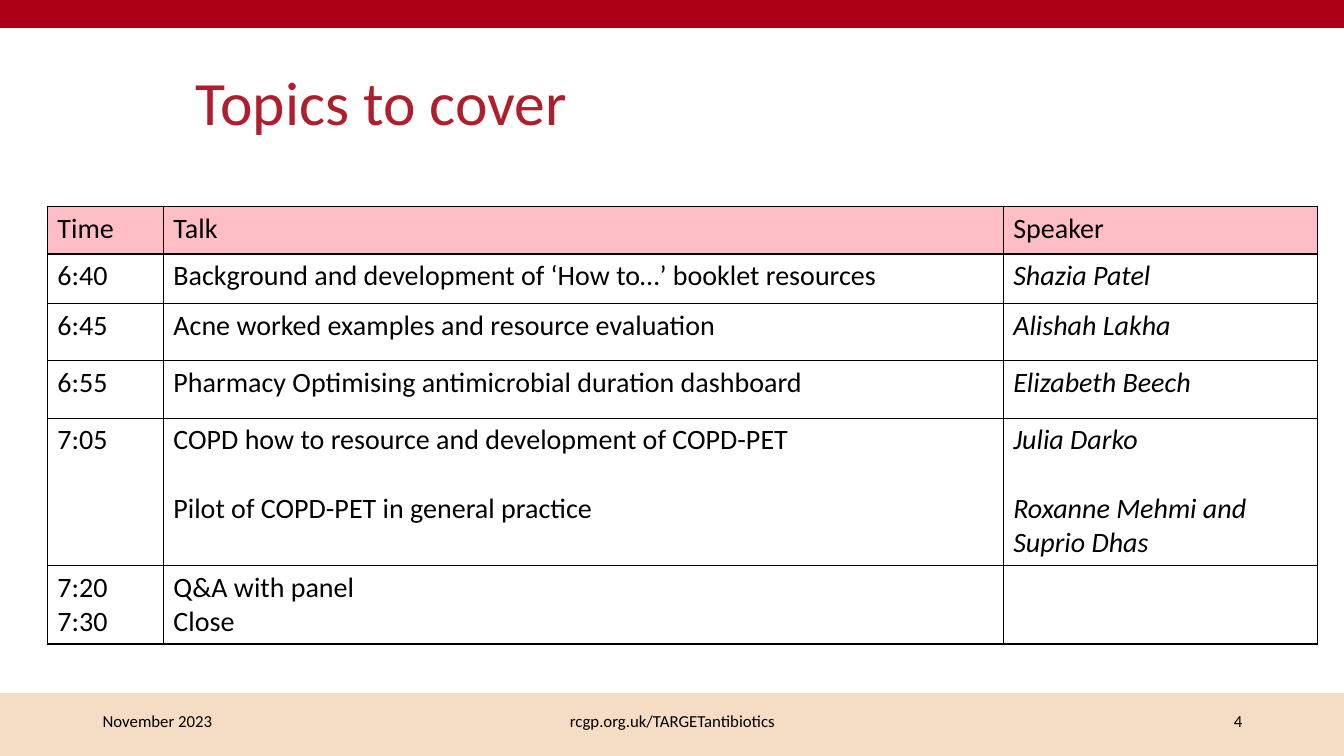
"""Build the agenda slide listing times, talks and speakers."""
from dataclasses import dataclass

from lxml import etree
from pptx import Presentation
from pptx.dml.color import RGBColor
from pptx.enum.shapes import MSO_SHAPE
from pptx.enum.text import MSO_ANCHOR, MSO_AUTO_SIZE, PP_ALIGN
from pptx.oxml.ns import qn
from pptx.util import Inches, Pt

RECTANGLE = MSO_SHAPE.RECTANGLE
MIDDLE = MSO_ANCHOR.MIDDLE
NO_AUTOFIT = MSO_AUTO_SIZE.NONE
LEFT, CENTER, RIGHT = PP_ALIGN.LEFT, PP_ALIGN.CENTER, PP_ALIGN.RIGHT
TITLE_ONLY_LAYOUT = 5
SPEAKER_COLUMN = 2


@dataclass(frozen=True)
class Theme:
    """Hold the colours, font and type sizes of the slide."""
    font: str = "Calibri"
    title_color: str = "AF1E2C"
    text_color: str = "000000"
    top_band: str = "AD0016"
    footer_band: str = "F4DDC4"
    header_fill: str = "FFBDC5"
    row_fill: str = "FFFFFF"
    border: str = "000000"
    title_size: int = 44
    table_size: int = 20
    footer_size: int = 12
    talk_gap: float = 24.4
    border_width: int = 1


THEME = Theme()

COLUMN_WIDTHS = (1.15, 8.33, 3.12)
ROW_HEIGHTS = (0.47, 0.49, 0.57, 0.57, 1.46, 0.78)
AGENDA = (
    ("Time", "Talk", "Speaker"),
    ("6:40", "Background and development of ‘How to…’ booklet resources", "Shazia Patel"),
    ("6:45", "Acne worked examples and resource evaluation", "Alishah Lakha"),
    ("6:55", "Pharmacy Optimising antimicrobial duration dashboard", "Elizabeth Beech"),
    ("7:05",
     "COPD how to resource and development of COPD-PET\nPilot of COPD-PET in general practice",
     "Julia Darko\nRoxanne Mehmi and Suprio Dhas"),
    ("7:20\n7:30", "Q&A with panel\nClose", ""),
)
SPACED_ROW = 4
FOOTERS = (
    ("November 2023", 0.92, 3, LEFT),
    ("rcgp.org.uk/TARGETantibiotics", 4.42, 4.5, CENTER),
    ("4", 9.42, 3, RIGHT),
)


def style_paragraph(paragraph, size, color=THEME.text_color, italic=False):
    """Give a paragraph its font, size and colour."""
    font = paragraph.font
    font.name = THEME.font
    font.size = Pt(size)
    font.italic = italic
    font.color.rgb = RGBColor.from_string(color)


def add_band(slide, top, height, color):
    """Add a coloured band across the full slide width."""
    band = slide.shapes.add_shape(
        RECTANGLE, 0, Inches(top), Inches(13.33), Inches(height))
    band.shadow.inherit = False
    band.fill.solid()
    band.fill.fore_color.rgb = RGBColor.from_string(color)
    band.line.color.rgb = RGBColor.from_string(color)
    band.line.width = Pt(1)


def set_title(slide, text):
    """Place and format the slide title."""
    title = slide.shapes.title
    title.left, title.top = Inches(1.84), Inches(0.32)
    title.width, title.height = Inches(10.69), Inches(1.45)
    frame = title.text_frame
    frame.text = text
    frame.word_wrap = True
    frame.auto_size = NO_AUTOFIT
    frame.vertical_anchor = MIDDLE
    heading = frame.paragraphs[0]
    heading.alignment = LEFT
    heading.line_spacing = 0.9
    style_paragraph(heading, THEME.title_size, THEME.title_color)


def add_footer(slide, text, left, width, alignment):
    """Add one text of the footer band."""
    footer = slide.shapes.add_textbox(
        Inches(left), Inches(6.95), Inches(width), Inches(0.4))
    frame = footer.text_frame
    frame.text = text
    frame.word_wrap = True
    frame.vertical_anchor = MIDDLE
    frame.paragraphs[0].alignment = alignment
    style_paragraph(frame.paragraphs[0], THEME.footer_size)


def add_borders(cell):
    """Draw a thin line on all four sides of a cell."""
    properties = cell._tc.get_or_add_tcPr()
    for side in ("a:lnL", "a:lnR", "a:lnT", "a:lnB"):
        line = etree.SubElement(properties, qn(side), w=str(Pt(THEME.border_width)))
        fill = etree.SubElement(line, qn("a:solidFill"))
        etree.SubElement(fill, qn("a:srgbClr"), val=THEME.border)


def fill_cell(cell, text, fill, italic, gap):
    """Write a cell and set its borders, fill and paragraph gap."""
    add_borders(cell)
    cell.fill.solid()
    cell.fill.fore_color.rgb = RGBColor.from_string(fill)
    cell.text = text
    for index, paragraph in enumerate(cell.text_frame.paragraphs):
        if index and gap:
            paragraph.space_before = Pt(gap)
        style_paragraph(paragraph, THEME.table_size, italic=italic)


def add_agenda(slide):
    """Add the table of times, talks and speakers."""
    agenda = slide.shapes.add_table(
        len(AGENDA), len(COLUMN_WIDTHS), Inches(0.47), Inches(2.05),
        Inches(sum(COLUMN_WIDTHS)), Inches(sum(ROW_HEIGHTS))).table
    agenda.first_row = False
    agenda.horz_banding = False
    for column, width in zip(agenda.columns, COLUMN_WIDTHS):
        column.width = Inches(width)
    for row, height in zip(agenda.rows, ROW_HEIGHTS):
        row.height = Inches(height)
    for row_index, entries in enumerate(AGENDA):
        fill = THEME.row_fill if row_index else THEME.header_fill
        gap = THEME.talk_gap if row_index == SPACED_ROW else 0
        for column_index, text in enumerate(entries):
            italic = row_index > 0 and column_index == SPEAKER_COLUMN
            fill_cell(agenda.cell(row_index, column_index), text, fill, italic, gap)


def main():
    """Build and save the slide."""
    presentation = Presentation()
    presentation.slide_width = Inches(13.33)
    presentation.slide_height = Inches(7.5)
    slide = presentation.slides.add_slide(
        presentation.slide_layouts[TITLE_ONLY_LAYOUT])
    add_band(slide, 6.88, 0.62, THEME.footer_band)
    add_band(slide, 0, 0.27, THEME.top_band)
    set_title(slide, "Topics to cover")
    for footer in FOOTERS:
        add_footer(slide, *footer)
    add_agenda(slide)
    presentation.save("out.pptx")


if __name__ == "__main__":
    main()
